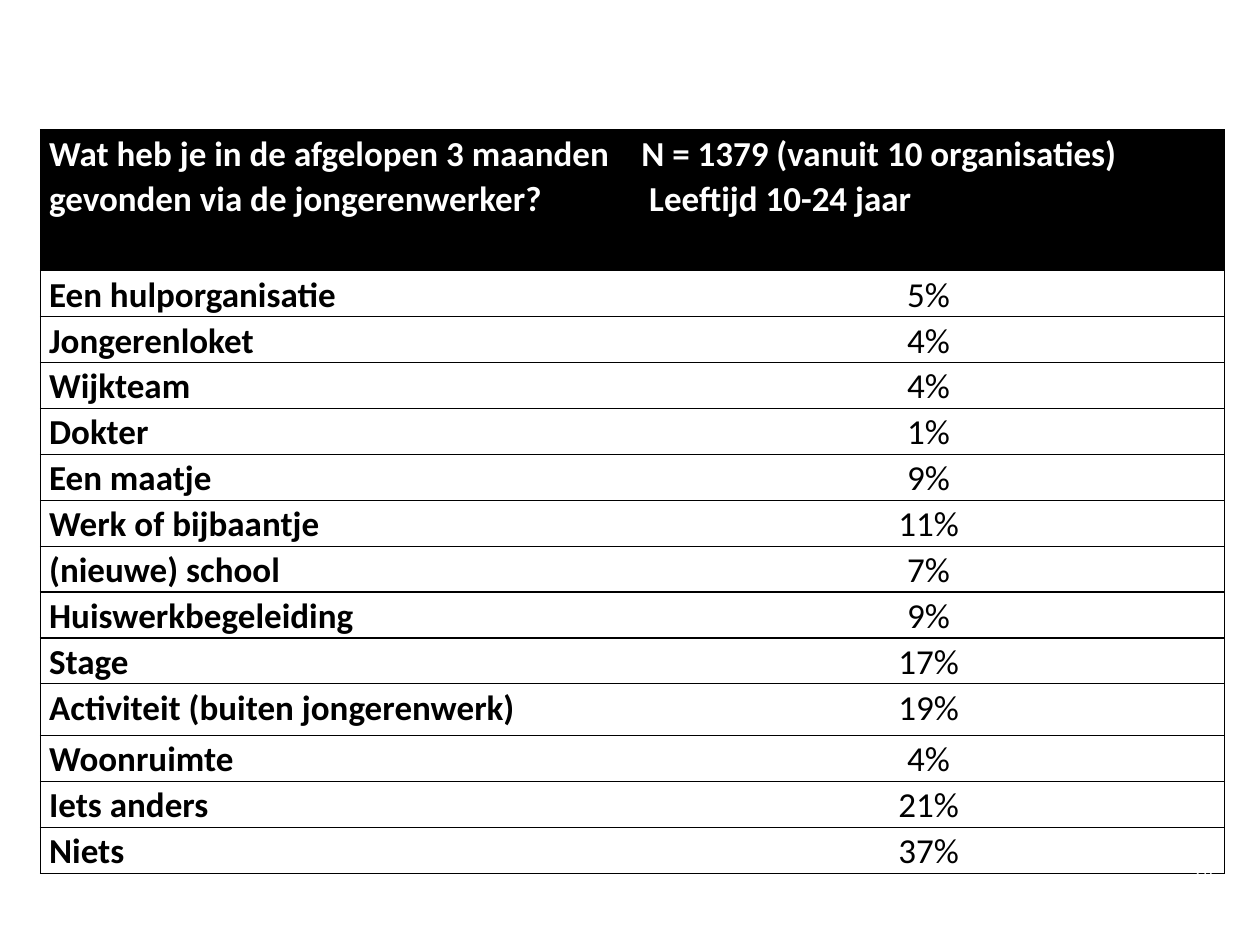
import dataclasses

import lxml.etree
import pptx
import pptx.dml.color
import pptx.enum.text
import pptx.oxml.ns
import pptx.util

PX = 9144


@dataclasses.dataclass(frozen=True)
class Theme:
    """Colours, font and type sizes of the deck."""

    ink: str = "000000"
    paper: str = "FFFFFF"
    font: str = "Calibri"
    table_size: int = 20
    number_size: int = 10
    line_spacing: float = 1.07
    border_width: float = 0.75


THEME = Theme()
ALIGN = pptx.enum.text.PP_ALIGN
HEADINGS = (
    "Wat heb je in de afgelopen 3 maanden gevonden via de jongerenwerker?",
    "N = 1379 (vanuit 10 organisaties)\n Leeftijd 10-24 jaar",
)
FINDINGS = (
    ("Een hulporganisatie", 5),
    ("Jongerenloket", 4),
    ("Wijkteam", 4),
    ("Dokter", 1),
    ("Een maatje", 9),
    ("Werk of bijbaantje", 11),
    ("(nieuwe) school", 7),
    ("Huiswerkbegeleiding", 9),
    ("Stage", 17),
    ("Activiteit (buiten jongerenwerk)", 19),
    ("Woonruimte", 4),
    ("Iets anders", 21),
    ("Niets", 37),
)
HEADING_HEIGHT, ROW_HEIGHT, TALL_ROW_HEIGHT = 112, 36, 41
TALL_ROW = 10


def style_paragraph(para, size, color, bold=False, align=ALIGN.LEFT):
    """Set the alignment and font of a paragraph."""
    para.alignment = align
    para.font.name = THEME.font
    para.font.size = pptx.util.Pt(size)
    para.font.bold = bold
    para.font.color.rgb = pptx.dml.color.RGBColor.from_string(color)


def set_borders(cell, visible):
    """Draw the named sides of a cell and clear the others."""
    properties = cell._tc.get_or_add_tcPr()
    for side in "LRTB":
        line = lxml.etree.SubElement(properties, pptx.oxml.ns.qn(f"a:ln{side}"))
        if side in visible:
            line.set("w", str(int(pptx.util.Pt(THEME.border_width))))
            fill = lxml.etree.SubElement(line, pptx.oxml.ns.qn("a:solidFill"))
            lxml.etree.SubElement(fill, pptx.oxml.ns.qn("a:srgbClr"), val=THEME.ink)
        else:
            lxml.etree.SubElement(line, pptx.oxml.ns.qn("a:noFill"))


def fill_cell(cell, text, visible, heading, bold, align):
    """Write and style one table cell."""
    set_borders(cell, visible)
    if heading:
        cell.fill.solid()
        cell.fill.fore_color.rgb = pptx.dml.color.RGBColor.from_string(THEME.ink)
    else:
        cell.fill.background()
    cell.margin_left = cell.margin_right = 7 * PX
    cell.margin_top = cell.margin_bottom = 0
    cell.text_frame.text = text
    color = THEME.paper if heading else THEME.ink
    for para in cell.text_frame.paragraphs:
        style_paragraph(para, THEME.table_size, color, bold, align)
        para.line_spacing = THEME.line_spacing


def add_findings_table(page, left, top, width):
    """Place the table of findings and their shares."""
    rows = [HEADINGS] + [(label, f"{share}%") for label, share in FINDINGS]
    heights = [HEADING_HEIGHT] + [ROW_HEIGHT] * len(FINDINGS)
    heights[TALL_ROW] = TALL_ROW_HEIGHT
    frame = page.shapes.add_table(
        len(rows), 2, left * PX, top * PX, width * PX, sum(heights) * PX
    )
    table = frame.table
    table.first_row = table.horz_banding = False
    for index, (label, value) in enumerate(rows):
        heading = index == 0
        table.rows[index].height = heights[index] * PX
        fill_cell(table.cell(index, 0), label, "LTB", heading, True, ALIGN.LEFT)
        fill_cell(
            table.cell(index, 1), value, "RTB", heading, heading,
            ALIGN.LEFT if heading else ALIGN.CENTER,
        )


def add_page_number(page, left, top, width, height, number):
    """Place the page number, right-aligned in its box."""
    box = page.shapes.add_textbox(left * PX, top * PX, width * PX, height * PX)
    box.text_frame.word_wrap = True
    box.text_frame.vertical_anchor = pptx.enum.text.MSO_ANCHOR.MIDDLE
    box.text_frame.text = str(number)
    para = box.text_frame.paragraphs[0]
    style_paragraph(para, THEME.number_size, THEME.paper, align=ALIGN.RIGHT)


def main():
    """Build and save the deck."""
    deck = pptx.Presentation()
    deck.slide_width, deck.slide_height = 1000 * PX, 750 * PX
    page = deck.slides.add_slide(deck.slide_layouts[6])
    add_findings_table(page, 32, 103, 940)
    add_page_number(page, 903, 670, 69, 40, 23)
    deck.save("out.pptx")


if __name__ == "__main__":
    main()
